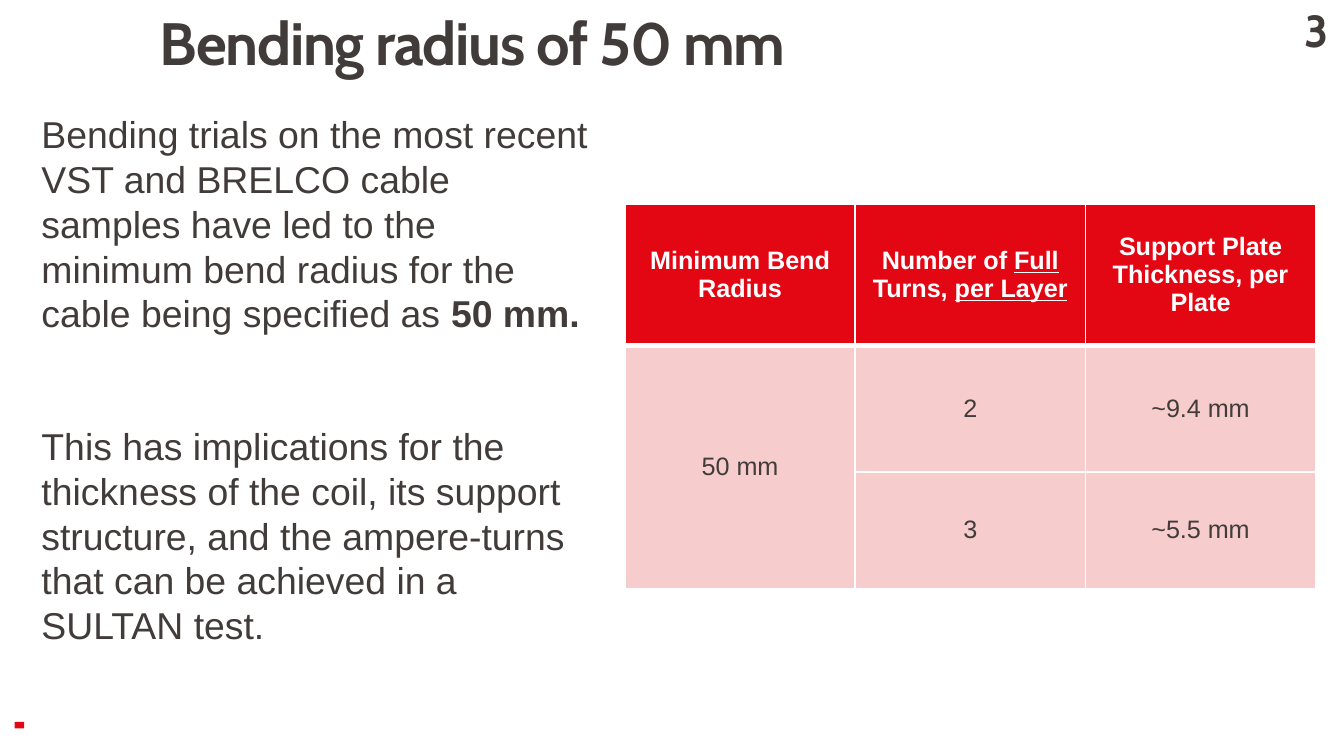
from dataclasses import dataclass

from lxml.etree import SubElement
from pptx import Presentation
from pptx.dml.color import RGBColor
from pptx.enum.shapes import MSO_SHAPE
from pptx.enum.text import MSO_ANCHOR, MSO_AUTO_SIZE, PP_ALIGN
from pptx.oxml.ns import qn
from pptx.util import Inches, Pt


@dataclass(frozen=True)
class Theme:
    """Colours, fonts and type sizes of the slide."""

    ink: RGBColor = RGBColor.from_string("413C3A")
    red: RGBColor = RGBColor.from_string("E30613")
    pink: RGBColor = RGBColor.from_string("F6CCCC")
    white: RGBColor = RGBColor.from_string("FFFFFF")
    heading_font: str = "Cabin"
    body_font: str = "Arial"
    title_size: float = 32
    number_size: float = 24
    body_size: float = 20
    table_size: float = 13.5


THEME = Theme()
WIDTH = 10
HEIGHT = WIDTH * 9 / 16
TITLE = "Bending radius of 50 mm"
STATEMENTS = [
    [("Bending trials on the most recent VST and BRELCO cable samples have led "
      "to the minimum bend radius for the cable being specified as ", False),
     ("50 mm.", True)],
    [("This has implications for the thickness of the coil, its support "
      "structure, and the ampere-turns that can be achieved in a SULTAN test.",
      False)],
]
BEND_ROWS = [
    [[("Minimum Bend Radius", False)],
     [("Number of ", False), ("Full", True), (" Turns, ", False), ("per Layer", True)],
     [("Support Plate Thickness, per Plate", False)]],
    [[("50 mm", False)], [("2", False)], [("~9.4 mm", False)]],
    [[], [("3", False)], [("~5.5 mm", False)]],
]
ROW_HEIGHTS = [1.05, 0.94, 0.87]


def box(left, top, width, height):
    """Convert a rectangle in inches to slide lengths."""
    return [Inches(length) for length in (left, top, width, height)]


def style(paragraph, family, size, color, bold=None):
    """Set the font shared by all runs of a paragraph."""
    font = paragraph.font
    font.name, font.size, font.bold = family, Pt(size), bold
    font.color.rgb = color


def set_insets(frame, left, top, right, bottom):
    """Set the inner margins of a text frame in inches."""
    frame.margin_left, frame.margin_top = Inches(left), Inches(top)
    frame.margin_right, frame.margin_bottom = Inches(right), Inches(bottom)


def add_title(slide):
    """Place and format the title placeholder."""
    title = slide.shapes.title
    title.left, title.top, title.width, title.height = box(0.99, 0.1, 8.58, 0.58)
    frame = title.text_frame
    frame.auto_size = MSO_AUTO_SIZE.NONE
    frame.vertical_anchor = MSO_ANCHOR.TOP
    set_insets(frame, 0.2, 0, 0.08, 0.05)
    heading = frame.paragraphs[0]
    heading.alignment = PP_ALIGN.LEFT
    heading.line_spacing = 0.9
    style(heading, THEME.heading_font, THEME.title_size, THEME.ink, True)
    wording = heading.add_run()
    wording.text = TITLE
    wording.font._rPr.set("spc", "-70")


def add_page_number(slide, number):
    """Add the page number in the top right corner."""
    frame = slide.shapes.add_textbox(*box(9.49, 0.02, 0.61, 0.3)).text_frame
    frame.word_wrap = True
    set_insets(frame, 0, 0, 0, 0)
    page = frame.paragraphs[0]
    page.text = number
    page.alignment = PP_ALIGN.CENTER
    style(page, THEME.heading_font, THEME.number_size, THEME.ink, True)


def add_corner_mark(slide):
    """Add the small red mark at the bottom left."""
    mark = slide.shapes.add_shape(MSO_SHAPE.RECTANGLE, *box(0.12, 5.36, 0.05, 0.07))
    mark.rotation = 270
    mark.shadow.inherit = False
    mark.fill.solid()
    mark.fill.fore_color.rgb = THEME.red
    mark.line.fill.background()


def add_statements(slide):
    """Add the body statements with a wide gap between them."""
    frame = slide.shapes.add_textbox(*box(0.21, 0.78, 4.28, 4.56)).text_frame
    frame.word_wrap = True
    for index, parts in enumerate(STATEMENTS):
        statement = frame.add_paragraph() if index else frame.paragraphs[0]
        statement.space_before = Pt(47 if index else 0)
        style(statement, THEME.body_font, THEME.body_size, THEME.ink)
        for wording, bold in parts:
            run = statement.add_run()
            run.text = wording
            if bold:
                run.font.bold = True


def add_borders(cell, top, bottom):
    """Draw white cell borders with the given top and bottom widths."""
    properties = cell._tc.get_or_add_tcPr()
    for side, width in (("L", 1), ("R", 1), ("T", top), ("B", bottom)):
        line = SubElement(properties, qn(f"a:ln{side}"), w=str(Pt(width)))
        fill = SubElement(line, qn("a:solidFill"))
        SubElement(fill, qn("a:srgbClr"), val=str(THEME.white))


def format_cell(cell, parts, row):
    """Fill one table cell and write its text."""
    header = row == 0
    add_borders(cell, top=3 if row == 1 else 1, bottom=3 if header else 1)
    cell.fill.solid()
    cell.fill.fore_color.rgb = THEME.red if header else THEME.pink
    cell.vertical_anchor = MSO_ANCHOR.MIDDLE
    entry = cell.text_frame.paragraphs[0]
    entry.alignment = PP_ALIGN.CENTER
    style(entry, THEME.body_font, THEME.table_size,
          THEME.white if header else THEME.ink, header)
    for wording, underlined in parts:
        run = entry.add_run()
        run.text = wording
        if underlined:
            run.font.underline = True


def add_bend_table(slide):
    """Add the table of turns and plate thickness per bend radius."""
    place = box(4.65, 1.52, 5.14, sum(ROW_HEIGHTS))
    table = slide.shapes.add_table(len(BEND_ROWS), len(BEND_ROWS[0]), *place).table
    for row, height in zip(table.rows, ROW_HEIGHTS):
        row.height = Inches(height)
    for row, entries in enumerate(BEND_ROWS):
        for column, parts in enumerate(entries):
            format_cell(table.cell(row, column), parts, row)
    table.cell(1, 0).merge(table.cell(2, 0))


def main():
    """Build and save the slide."""
    deck = Presentation()
    deck.slide_width, deck.slide_height = Inches(WIDTH), Inches(HEIGHT)
    slide = deck.slides.add_slide(deck.slide_layouts[5])
    add_corner_mark(slide)
    add_page_number(slide, "3")
    add_title(slide)
    add_statements(slide)
    add_bend_table(slide)
    deck.save("out.pptx")


if __name__ == "__main__":
    main()
